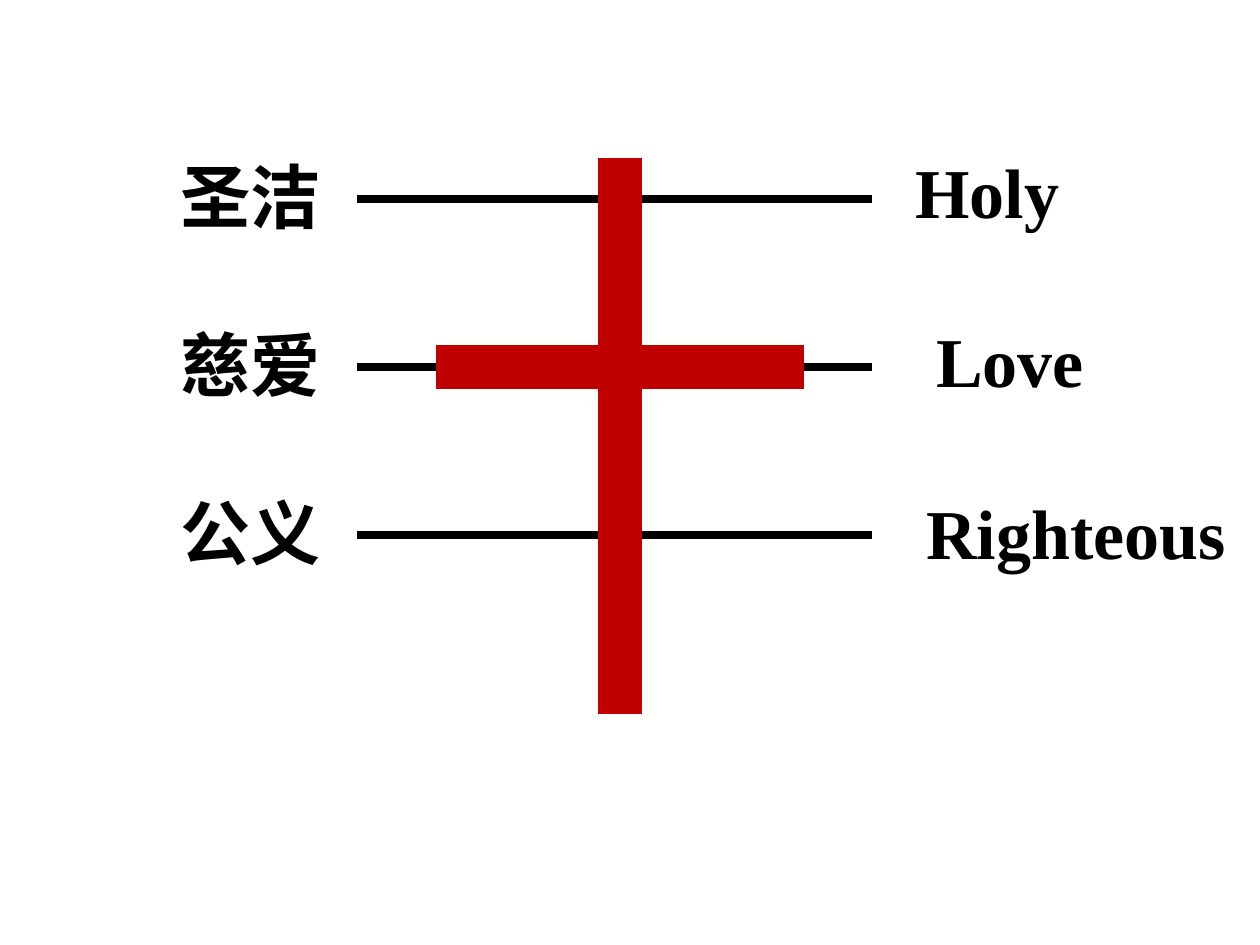
from pptx import Presentation
from pptx.dml.color import RGBColor
from pptx.enum.shapes import MSO_CONNECTOR
from pptx.enum.text import MSO_AUTO_SIZE
from pptx.oxml.ns import qn
from pptx.util import Pt
from lxml.etree import SubElement

PX = 914400 // 126
BLACK, RED = "000000", "C00000"
CHINESE_FONT, ENGLISH_FONT = "Calibri", "Times New Roman"

FIRST_ROW, ROW_GAP = 199, 168
ROW_LEFT, ROW_RIGHT = 357, 872
CHINESE_LEFT, CHINESE_WIDTH, CHINESE_RISE = 168, 167, 52
LABEL_HEIGHT = 97

ATTRIBUTES = [
    ("圣洁", "Holy", 903, 142, 171),
    ("慈爱", "Love", 924, 311, 175),
    ("公义", "Righteous", 914, 483, 328),
]
CROSS_BEAMS = [(436, 367, 804, 367), (620, 158, 620, 714)]


def color(value):
    return RGBColor.from_string(value)


def add_line(slide, points, line_color, width):
    connector = slide.shapes.add_connector(
        MSO_CONNECTOR.STRAIGHT, *(point * PX for point in points))
    connector.line.color.rgb = color(line_color)
    connector.line.width = Pt(width)
    SubElement(connector._element.spPr, qn("a:effectLst"))


def add_label(slide, text, left, top, width, font_name):
    shape = slide.shapes.add_textbox(
        left * PX, top * PX, width * PX, LABEL_HEIGHT * PX)
    frame = shape.text_frame
    frame.word_wrap = False
    frame.auto_size = MSO_AUTO_SIZE.SHAPE_TO_FIT_TEXT
    run = frame.paragraphs[0].add_run()
    run.text = text
    run.font.name = font_name
    run.font.size = Pt(40)
    run.font.bold = True
    run.font.color.rgb = color(BLACK)


def main():
    presentation = Presentation()
    presentation.slide_width = 1260 * PX
    presentation.slide_height = 945 * PX
    slide = presentation.slides.add_slide(presentation.slide_layouts[6])

    for row, (chinese, english, left, top, width) in enumerate(ATTRIBUTES):
        y = FIRST_ROW + row * ROW_GAP
        add_line(slide, (ROW_LEFT, y, ROW_RIGHT, y), BLACK, 5)
        add_label(slide, chinese, CHINESE_LEFT, y - CHINESE_RISE,
                  CHINESE_WIDTH, CHINESE_FONT)
        add_label(slide, english, left, top, width, ENGLISH_FONT)

    for beam in CROSS_BEAMS:
        add_line(slide, beam, RED, 25)

    presentation.save("out.pptx")


if __name__ == "__main__":
    main()
